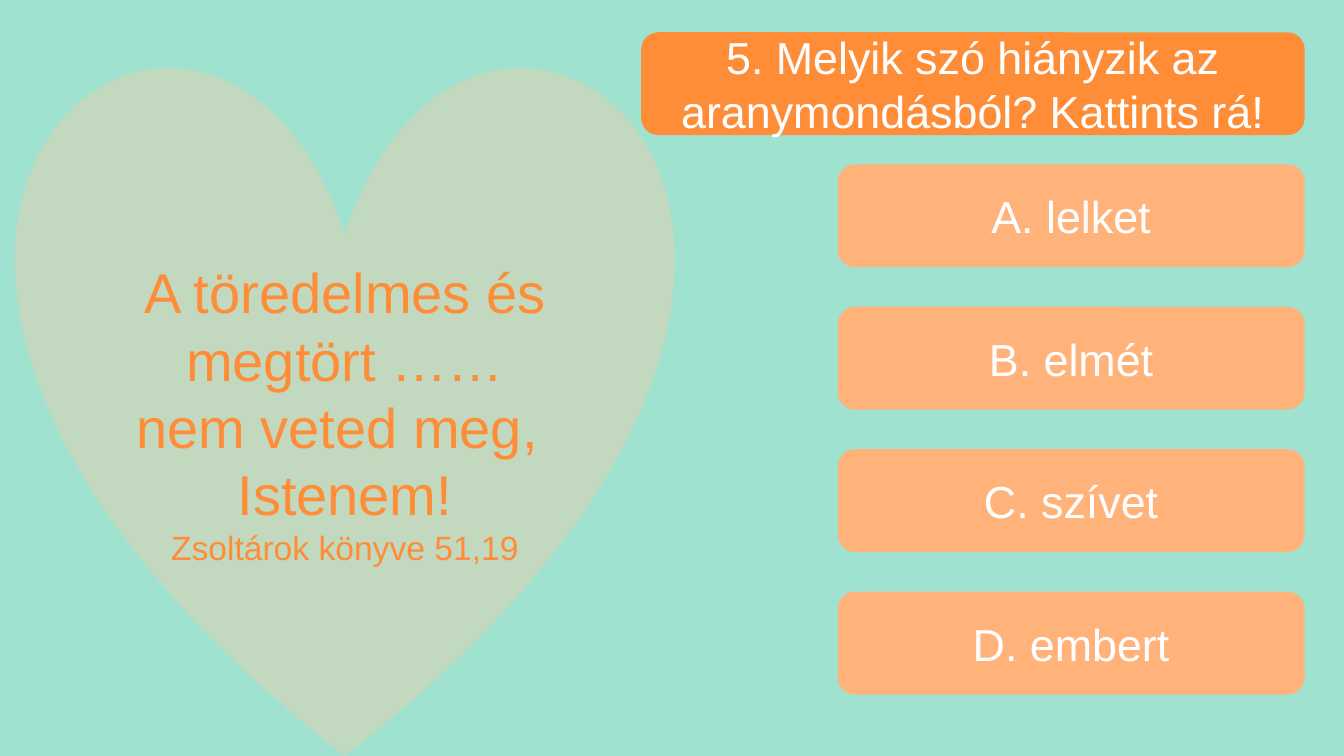
from dataclasses import dataclass

from lxml import etree
from pptx import Presentation
from pptx import util as u
from pptx.dml.color import RGBColor
from pptx.enum import shapes, text
from pptx.oxml import ns

MINT = RGBColor(0x9E, 0xE2, 0xCF)
PEACH = RGBColor(0xFF, 0xCC, 0xA6)
LIGHT_ORANGE = RGBColor(0xFF, 0xB3, 0x7A)
ORANGE = RGBColor(0xFF, 0x8D, 0x37)
WHITE = RGBColor(0xFF, 0xFF, 0xFF)
FONT = "Arial"

QUESTION = "5. Melyik szó hiányzik az aranymondásból? Kattints rá!"
ANSWERS = ["A. lelket", "B. elmét", "C. szívet", "D. embert"]
ANSWER_TOP = 1.63
ANSWER_PITCH = 4.24 / 3


@dataclass(frozen=True)
class Box:
    left: float
    top: float
    width: float
    height: float


@dataclass(frozen=True)
class Line:
    wording: str
    size: int
    color: RGBColor


VERSE = [
    Line("A töredelmes és", 40, ORANGE),
    Line("megtört ……", 40, ORANGE),
    Line("nem veted meg, ", 40, ORANGE),
    Line("Istenem!", 40, ORANGE),
    Line("Zsoltárok könyve 51,19", 24, ORANGE),
]
HEART_BOX = Box(0.17, 0.59, 6.5, 6.91)
QUESTION_BOX = Box(6.36, 0.32, 6.58, 1.02)


def add_panel(slide, preset: shapes.MSO_SHAPE, box: Box, color: RGBColor):
    shape = slide.shapes.add_shape(
        preset, u.Inches(box.left), u.Inches(box.top), u.Inches(box.width), u.Inches(box.height)
    )
    shape.shadow.inherit = False
    shape.fill.solid()
    shape.fill.fore_color.rgb = color
    shape.line.fill.background()
    return shape


def write_lines(shape, lines: list[Line]) -> None:
    frame = shape.text_frame
    frame.word_wrap = True
    frame.auto_size = text.MSO_AUTO_SIZE.NONE
    frame.vertical_anchor = text.MSO_ANCHOR.MIDDLE
    frame.text = "\n".join(line.wording for line in lines)
    for paragraph, line in zip(frame.paragraphs, lines):
        paragraph.alignment = text.PP_ALIGN.CENTER
        paragraph.font.name = FONT
        paragraph.font.size = u.Pt(line.size)
        paragraph.font.color.rgb = line.color


def set_opacity(shape, percent: int) -> None:
    color = shape.element.spPr.find(f"{ns.qn('a:solidFill')}/{ns.qn('a:srgbClr')}")
    etree.SubElement(color, ns.qn("a:alpha"), val=str(percent * 1000))


def add_heart(slide) -> None:
    heart = add_panel(slide, shapes.MSO_SHAPE.HEART, HEART_BOX, PEACH)
    set_opacity(heart, 38)
    write_lines(heart, VERSE)
    heart.text_frame.margin_top = u.Inches(0.72)


def add_question(slide) -> None:
    add_panel(slide, shapes.MSO_SHAPE.ROUNDED_RECTANGLE, QUESTION_BOX, ORANGE)
    title = slide.shapes.title
    title.left, title.top = u.Inches(QUESTION_BOX.left), u.Inches(QUESTION_BOX.top)
    title.width, title.height = u.Inches(QUESTION_BOX.width), u.Inches(QUESTION_BOX.height)
    write_lines(title, [Line(QUESTION, 32, WHITE)])
    title.element.getparent().append(title.element)


def add_answers(slide) -> None:
    for index, answer in enumerate(ANSWERS):
        box = Box(8.31, ANSWER_TOP + index * ANSWER_PITCH, 4.63, 1.02)
        button = add_panel(slide, shapes.MSO_SHAPE.ROUNDED_RECTANGLE, box, LIGHT_ORANGE)
        write_lines(button, [Line(answer, 32, WHITE)])


def main() -> None:
    presentation = Presentation()
    presentation.slide_width = u.Inches(13.33)
    presentation.slide_height = u.Inches(7.5)
    slide = presentation.slides.add_slide(presentation.slide_layouts.get_by_name("Title Only"))
    slide.background.fill.solid()
    slide.background.fill.fore_color.rgb = MINT
    add_heart(slide)
    add_question(slide)
    add_answers(slide)
    presentation.save("out.pptx")


if __name__ == "__main__":
    main()
